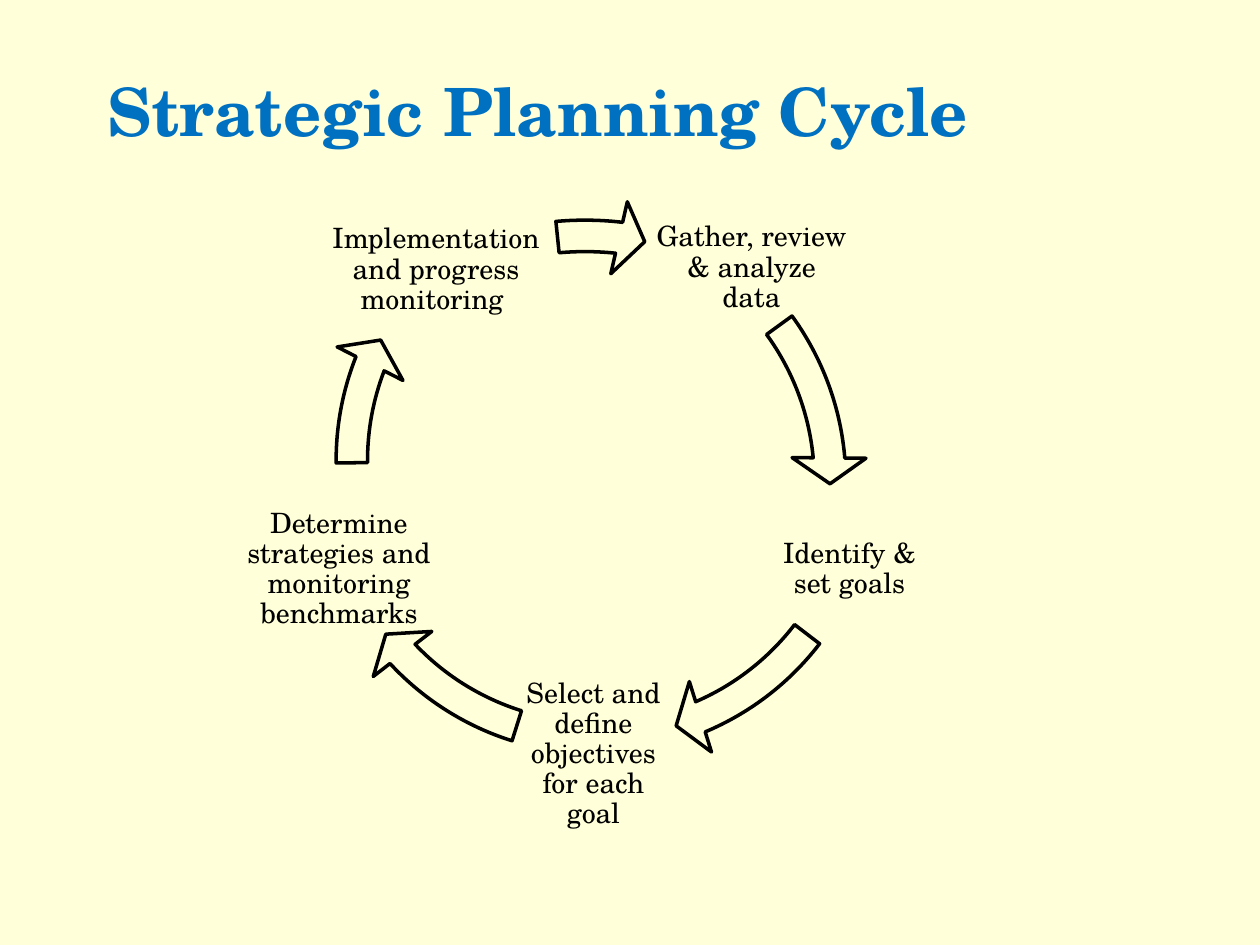
from pptx import Presentation
from pptx import util as u
from pptx.dml.color import RGBColor
from pptx.enum import shapes, text

CREAM = RGBColor(0xFF, 0xFF, 0xD9)
BLUE = RGBColor(0x00, 0x70, 0xC0)
BLACK = RGBColor(0, 0, 0)
FONT = "TeX Gyre Schola"
PX = 914400 / 126

TITLE = ("Strategic Planning Cycle", (95, 42, 1071, 136))
STEPS = [
    ("Gather, review & analyze data", (654, 209, 195, 118)),
    ("Identify & set goals", (769, 489, 161, 161)),
    ("Select and define objectives for each goal", (513, 674, 161, 161)),
    ("Determine strategies and monitoring benchmarks", (226, 489, 226, 161)),
    ("Implementation and progress monitoring ", (306, 174, 260, 192)),
]
# Box of the full circle, then start and end angle in degrees, clockwise from the right
ARROWS = [
    ((262, 179, 605, 605), 323.99, 354.93),
    ((294, 170, 605, 605), 37.52, 66.95),
    ((294, 170, 605, 605), 107.46, 136.89),
    ((315, 158, 605, 605), 179.49, 201.36),
    ((262, 199, 646, 605), 264.06, 277.36),
]
BAND, HEAD_ANGLE, HEAD_WIDTH = 0.052, 5.59, 0.061
DEGREE = 0.6  # adjustment units in one degree

TITLE_FONT = {"name": FONT, "size": u.Pt(38), "bold": True}
STEP_FONT = {"name": FONT, "size": u.Pt(16)}
STEP_PARAGRAPH = {"alignment": text.PP_ALIGN.CENTER, "line_spacing": 0.9}
STEP_MARGINS = {f"margin_{side}": u.Inches(0.02)
                for side in ("left", "top", "right", "bottom")}


def set_all(target, values):
    for name, value in values.items():
        setattr(target, name, value)


def emu(box):
    return [u.Emu(round(length * PX)) for length in box]


def add_text(slide, words, box, font, color, paragraph_format=None, margins=None):
    frame = slide.shapes.add_textbox(*emu(box)).text_frame
    set_all(frame, {"word_wrap": True, "vertical_anchor": text.MSO_ANCHOR.MIDDLE})
    set_all(frame, margins or {})
    paragraph = frame.paragraphs[0]
    set_all(paragraph, paragraph_format or {})
    run = paragraph.add_run()
    run.text = words
    set_all(run.font, font)
    run.font.color.rgb = color


def add_arrow(slide, box, start, end):
    arrow = slide.shapes.add_shape(shapes.MSO_SHAPE.CIRCULAR_ARROW, *emu(box))
    values = (BAND, HEAD_ANGLE * DEGREE, end * DEGREE, start * DEGREE, HEAD_WIDTH)
    for index, value in enumerate(values):
        arrow.adjustments[index] = value
    arrow.shadow.inherit = False
    arrow.fill.solid()
    arrow.fill.fore_color.rgb = CREAM
    arrow.line.color.rgb = BLACK
    arrow.line.width = u.Pt(2)


def main():
    presentation = Presentation()
    presentation.slide_width, presentation.slide_height = u.Inches(10), u.Inches(7.5)
    slide = presentation.slides.add_slide(presentation.slide_layouts[6])
    slide.background.fill.solid()
    slide.background.fill.fore_color.rgb = CREAM

    add_text(slide, *TITLE, TITLE_FONT, BLUE)
    for (words, box), arrow in zip(STEPS, ARROWS):
        add_text(slide, words, box, STEP_FONT, BLACK, STEP_PARAGRAPH, STEP_MARGINS)
        add_arrow(slide, *arrow)
    presentation.save("out.pptx")


if __name__ == "__main__":
    main()
